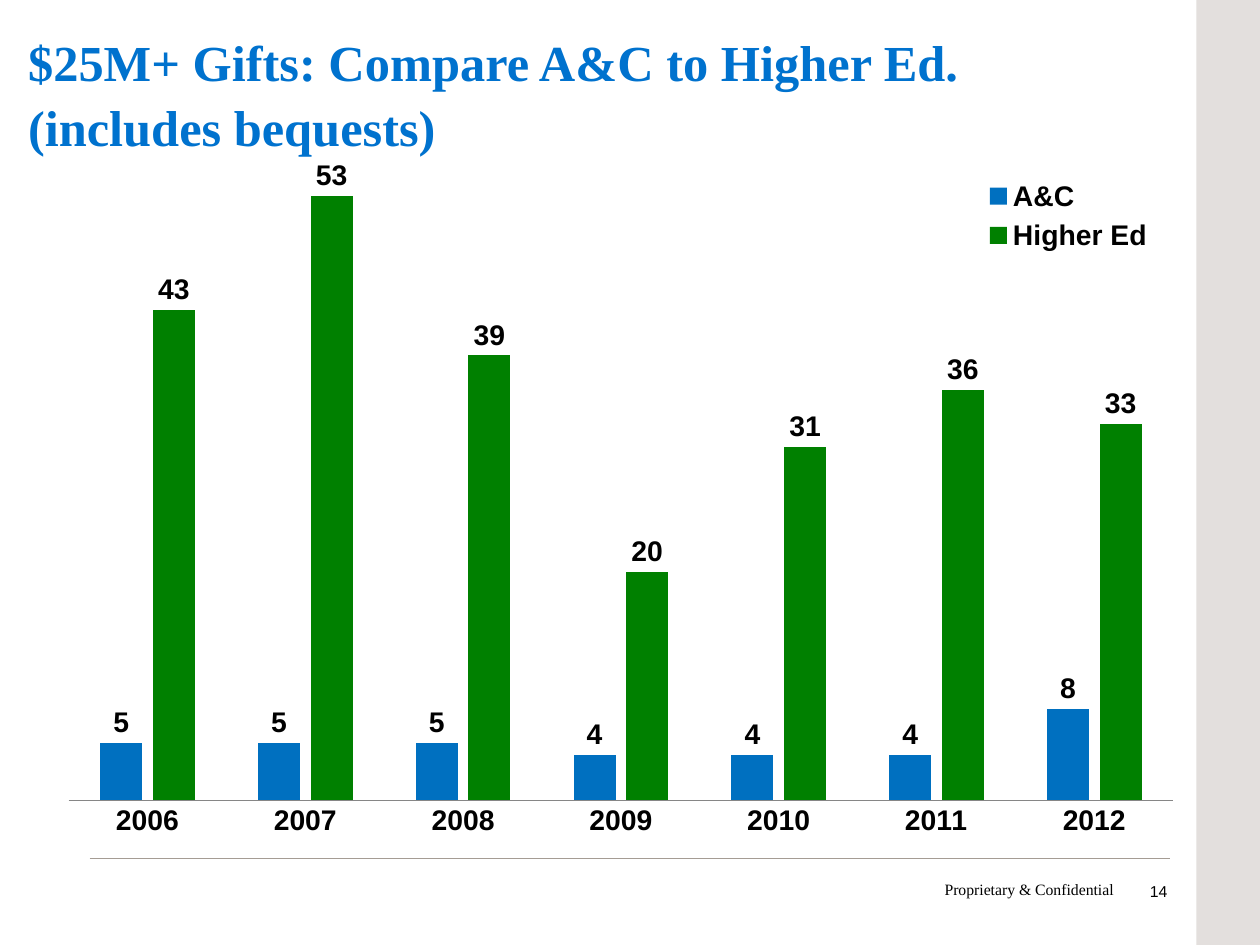
from lxml import etree
from pptx import Presentation
from pptx.chart.data import CategoryChartData
from pptx.dml.color import RGBColor
from pptx.enum.chart import XL_CHART_TYPE, XL_LABEL_POSITION, XL_LEGEND_POSITION, XL_TICK_MARK
from pptx.enum.shapes import MSO_CONNECTOR, MSO_SHAPE
from pptx.enum.text import PP_ALIGN
from pptx.oxml import parse_xml
from pptx.oxml.ns import nsdecls, qn
from pptx.util import Inches, Pt

BLACK = RGBColor(0x00, 0x00, 0x00)
TITLE_BLUE = RGBColor(0x00, 0x72, 0xCE)
BAR_BLUE = RGBColor(0x00, 0x70, 0xC0)
BAR_GREEN = RGBColor(0x00, 0x80, 0x00)
BAND_GREY = RGBColor(0xE3, 0xDF, 0xDD)
RULE_GREY = RGBColor(0xA5, 0x9C, 0x94)
AXIS_GREY = RGBColor(0x86, 0x86, 0x86)


def add_text(box, text, font, size, color=BLACK, bold=False, align=PP_ALIGN.LEFT):
    tf = s.shapes.add_textbox(*(Inches(v) for v in box)).text_frame
    tf.word_wrap = True
    p = tf.paragraphs[0]
    p.text = text
    p.alignment = align
    p.font.name, p.font.size, p.font.bold = font, Pt(size), bold
    p.font.color.rgb = color
    return p


def make_layout(x, y, w, h, inner=False):
    """Return a manual chart layout in fractions of the chart area."""
    target = '<c:layoutTarget val="inner"/>' if inner else ""
    return parse_xml(
        f'<c:layout {nsdecls("c")}><c:manualLayout>{target}'
        '<c:xMode val="edge"/><c:yMode val="edge"/>'
        f'<c:x val="{x}"/><c:y val="{y}"/><c:w val="{w}"/><c:h val="{h}"/>'
        '</c:manualLayout></c:layout>')


prs = Presentation()
prs.slide_width, prs.slide_height = Inches(11.11), Inches(8.33)
s = prs.slides.add_slide(prs.slide_layouts[6])

# Footer and side band
add_text((9.74, 7.72, 0.65, 0.45), "14", "Arial", 10, align=PP_ALIGN.RIGHT)
add_text((8.23, 7.71, 1.81, 0.27), "Proprietary & Confidential", "Times New Roman", 10)

rule = s.shapes.add_connector(
    MSO_CONNECTOR.STRAIGHT, Inches(0.79), Inches(7.57), Inches(10.32), Inches(7.57))
rule.line.color.rgb = RULE_GREY
rule.line.width = Pt(0.75)
etree.SubElement(rule._element.spPr, qn("a:effectLst"))

band = s.shapes.add_shape(
    MSO_SHAPE.RECTANGLE, Inches(10.55), 0, Inches(0.56), prs.slide_height)
band.shadow.inherit = False
band.fill.solid()
band.fill.fore_color.rgb = BAND_GREY
band.line.fill.background()

title = add_text((0.15, 0.19, 9.87, 1.01),
                 "$25M+ Gifts: Compare A&C to Higher Ed. (includes bequests)",
                 "Times New Roman", 32, TITLE_BLUE, bold=True)
title.line_spacing = 1.07

# Gifts chart
data = CategoryChartData()
data.categories = [str(year) for year in range(2006, 2013)]
data.add_series("A&C", (5, 5, 5, 4, 4, 4, 8))
data.add_series("Higher Ed", (43, 53, 39, 20, 31, 36, 33))
chart = s.shapes.add_chart(
    XL_CHART_TYPE.COLUMN_CLUSTERED, Inches(0.6), Inches(0.63),
    Inches(9.75), Inches(6.88), data).chart
chart.has_title = False
chart.font.name, chart.font.size, chart.font.bold = "Arial", Pt(18), True
chart.font.color.rgb = BLACK

plot = chart.plots[0]
plot.vary_by_categories = False
plot.gap_width, plot.overlap = 150, -25
for series, color in zip(plot.series, (BAR_BLUE, BAR_GREEN)):
    series.format.fill.solid()
    series.format.fill.fore_color.rgb = color
    labels = series.data_labels
    labels.show_value = True
    labels.position = XL_LABEL_POSITION.OUTSIDE_END

years = chart.category_axis
years.major_tick_mark = years.minor_tick_mark = XL_TICK_MARK.NONE
years.format.line.color.rgb = AXIS_GREY
years.format.line.width = Pt(0.75)
gifts = chart.value_axis
gifts.minimum_scale, gifts.maximum_scale = 0, 60
gifts.has_major_gridlines = False
gifts.visible = False

chart.has_legend = True
legend = chart.legend
legend.position = XL_LEGEND_POSITION.RIGHT
legend.include_in_layout = False

plot_area = chart._chartSpace.chart.plotArea
for old in plot_area.findall(qn("c:layout")):
    plot_area.remove(old)
plot_area.insert(0, make_layout(0, 0.057, 1, 0.877, inner=True))
for old in legend._element.findall(qn("c:layout")):
    legend._element.remove(old)
legend._element.find(qn("c:legendPos")).addnext(make_layout(0.82, 0.13, 0.17, 0.11))

prs.save("out.pptx")
